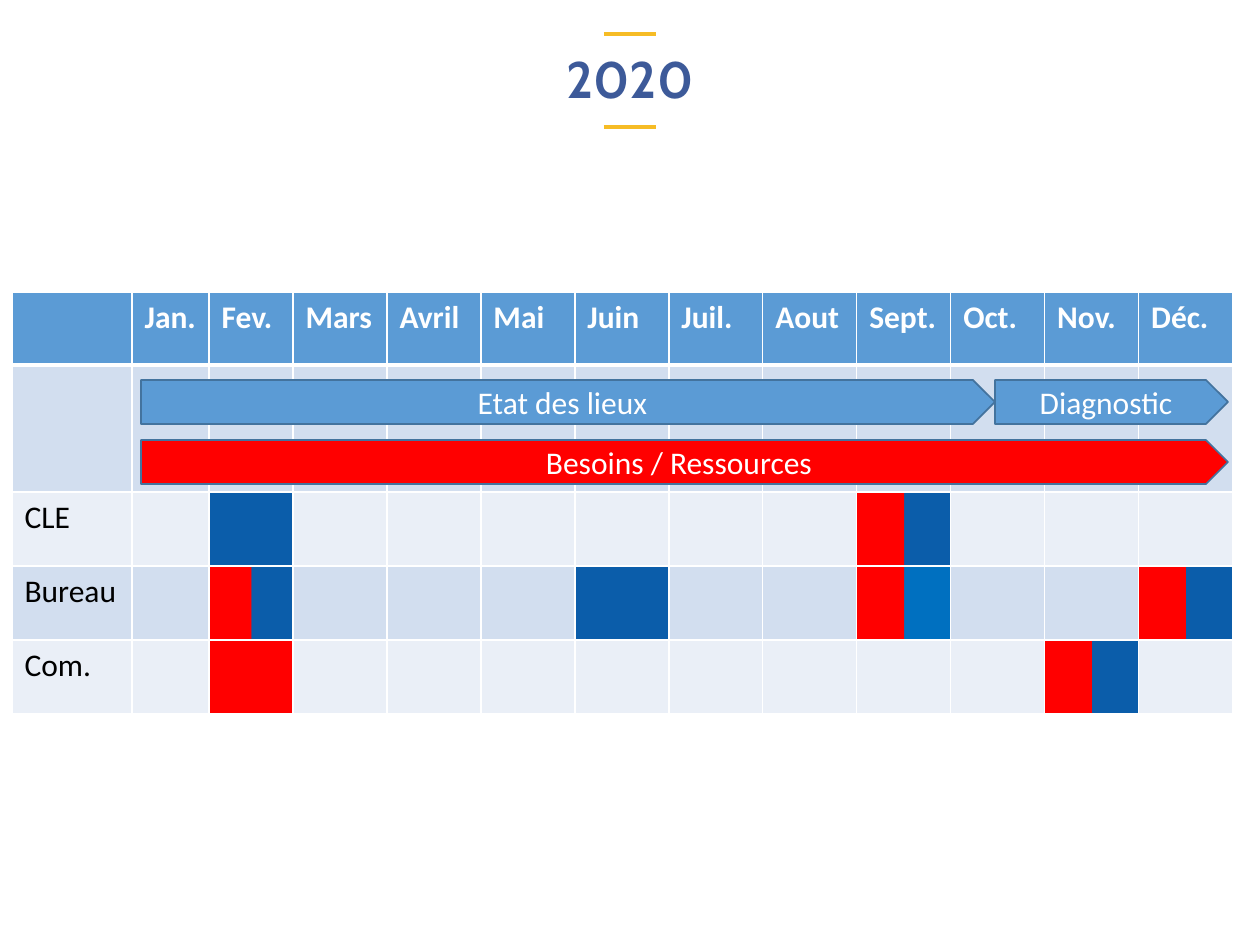
from lxml import etree
from pptx import Presentation
from pptx.dml.color import RGBColor
from pptx.enum.shapes import MSO_CONNECTOR, MSO_SHAPE
from pptx.enum.text import MSO_ANCHOR, PP_ALIGN
from pptx.oxml.ns import qn
from pptx.util import Pt

STRAIGHT = MSO_CONNECTOR.STRAIGHT
PENTAGON = MSO_SHAPE.PENTAGON
MIDDLE = MSO_ANCHOR.MIDDLE
CENTER = PP_ALIGN.CENTER

EMU_PER_PX = 914400 / 126
COLORS = {
    "accent": "F6BC25",
    "title": "3D5A99",
    "header": "5B9BD5",
    "outline": "43739E",
    "band_dark": "D2DEEF",
    "band_light": "EAEFF7",
    "red": "FF0000",
    "blue": "0B5DAA",
    "bright_blue": "0070C0",
    "white": "FFFFFF",
    "black": "000000",
}
MONTHS = ["Jan.", "Fev.", "Mars", "Avril", "Mai", "Juin", "Juil.",
          "Aout", "Sept.", "Oct.", "Nov.", "Déc."]
GROUPS = ["", "CLE", "Bureau", "Com."]
COLUMN_WIDTHS = [120, 77, 84] + [94] * 10
ROW_HEIGHTS = [73, 127, 74, 74, 74]
MEETINGS = {
    ("CLE", "Fev."): ["blue"],
    ("CLE", "Sept."): ["red", "blue"],
    ("Bureau", "Fev."): ["red", "blue"],
    ("Bureau", "Juin"): ["blue"],
    ("Bureau", "Sept."): ["red", "bright_blue"],
    ("Bureau", "Déc."): ["red", "blue"],
    ("Com.", "Fev."): ["red"],
    ("Com.", "Nov."): ["red", "blue"],
}
PHASES = [
    ("Etat des lieux", 141, 380, 854, "header"),
    ("Diagnostic", 995, 380, 233, "header"),
    ("Besoins / Ressources", 141, 440, 1087, "red"),
]


def px(length):
    """Convert pixels to EMU."""
    return round(length * EMU_PER_PX)


def rgb(name):
    """Return the named colour."""
    return RGBColor.from_string(COLORS[name])


def style_text(frame, font_name, size, color, bold=False):
    """Format every run of a text frame."""
    for paragraph in frame.paragraphs:
        for run in paragraph.runs:
            run.font.name = font_name
            run.font.size = Pt(size)
            run.font.bold = bold
            run.font.color.rgb = rgb(color)


def add_title(slide, text):
    """Fill and place the title placeholder."""
    title = slide.shapes.title
    title.left, title.top, title.width, title.height = map(px, (87, 44, 1086, 76))
    frame = title.text_frame
    frame.text = text
    frame.vertical_anchor = MIDDLE
    frame.paragraphs[0].alignment = CENTER
    frame.paragraphs[0].line_spacing = 0.9
    style_text(frame, "Cabin", 29.3, "title", True)


def add_accent_line(slide, y):
    """Draw a short centred rule by the title."""
    rule = slide.shapes.add_connector(STRAIGHT, px(604), px(y), px(656), px(y))
    rule.line.color.rgb = rgb("accent")
    rule.line.width = Pt(2.75)
    etree.SubElement(rule._element.spPr, qn("a:effectLst"))


def set_borders(cell, top, bottom):
    """Give a cell white borders, one point wide at the sides."""
    properties = cell._tc.get_or_add_tcPr()
    for side, width in (("L", 1), ("R", 1), ("T", top), ("B", bottom)):
        border = etree.SubElement(properties, qn(f"a:ln{side}"), w=str(Pt(width)))
        solid = etree.SubElement(border, qn("a:solidFill"))
        etree.SubElement(solid, qn("a:srgbClr"), val=COLORS["white"])


def fill_cell(cell, names):
    """Fill a cell with one colour or with two sharp halves."""
    if len(names) == 1:
        cell.fill.solid()
        cell.fill.fore_color.rgb = rgb(names[0])
        return
    cell.fill.gradient()
    cell.fill.gradient_angle = 0
    stops = cell._tc.tcPr.find(qn("a:gradFill")).find(qn("a:gsLst"))
    for stop in list(stops):
        stops.remove(stop)
    left, right = names
    for percent, name in ((0, left), (50, left), (51, right), (100, right)):
        stop = etree.SubElement(stops, qn("a:gs"), pos=str(percent * 1000))
        etree.SubElement(stop, qn("a:srgbClr"), val=COLORS[name])


def add_calendar(slide):
    """Add the table of groups by month."""
    table = slide.shapes.add_table(
        len(ROW_HEIGHTS), len(COLUMN_WIDTHS), px(12), px(292),
        px(sum(COLUMN_WIDTHS)), px(sum(ROW_HEIGHTS))).table
    for column, width in zip(table.columns, COLUMN_WIDTHS):
        column.width = px(width)
    for row, height in zip(table.rows, ROW_HEIGHTS):
        row.height = px(height)

    labels = [[""] + MONTHS] + [[group] + [""] * len(MONTHS) for group in GROUPS]
    for r, row_labels in enumerate(labels):
        is_header = r == 0
        band = "header" if is_header else ("band_light", "band_dark")[r % 2]
        for c, label in enumerate(row_labels):
            cell = table.cell(r, c)
            cell.text_frame.text = label
            style_text(cell.text_frame, "Calibri", 18,
                       "white" if is_header else "black", is_header)
            set_borders(cell, 3 if r == 1 else 1, 3 if is_header else 1)
            fill_cell(cell, MEETINGS.get((row_labels[0], labels[0][c]), [band]))


def add_phase(slide, label, left, top, width, color):
    """Add a phase arrow over the calendar."""
    phase = slide.shapes.add_shape(PENTAGON, px(left), px(top), px(width), px(44))
    phase.shadow.inherit = False
    phase.fill.solid()
    phase.fill.fore_color.rgb = rgb(color)
    phase.line.color.rgb = rgb("outline")
    phase.line.width = Pt(1)
    frame = phase.text_frame
    frame.text = label
    frame.vertical_anchor = MIDDLE
    frame.paragraphs[0].alignment = CENTER
    style_text(frame, "Calibri", 18, "white")


def main():
    """Build and save the slide."""
    presentation = Presentation()
    presentation.slide_width = px(1260)
    presentation.slide_height = px(945)
    slide = presentation.slides.add_slide(presentation.slide_layouts[5])
    for y in (34, 127):
        add_accent_line(slide, y)
    add_title(slide, "2020")
    add_calendar(slide)
    for phase in PHASES:
        add_phase(slide, *phase)
    presentation.save("out.pptx")


if __name__ == "__main__":
    main()
